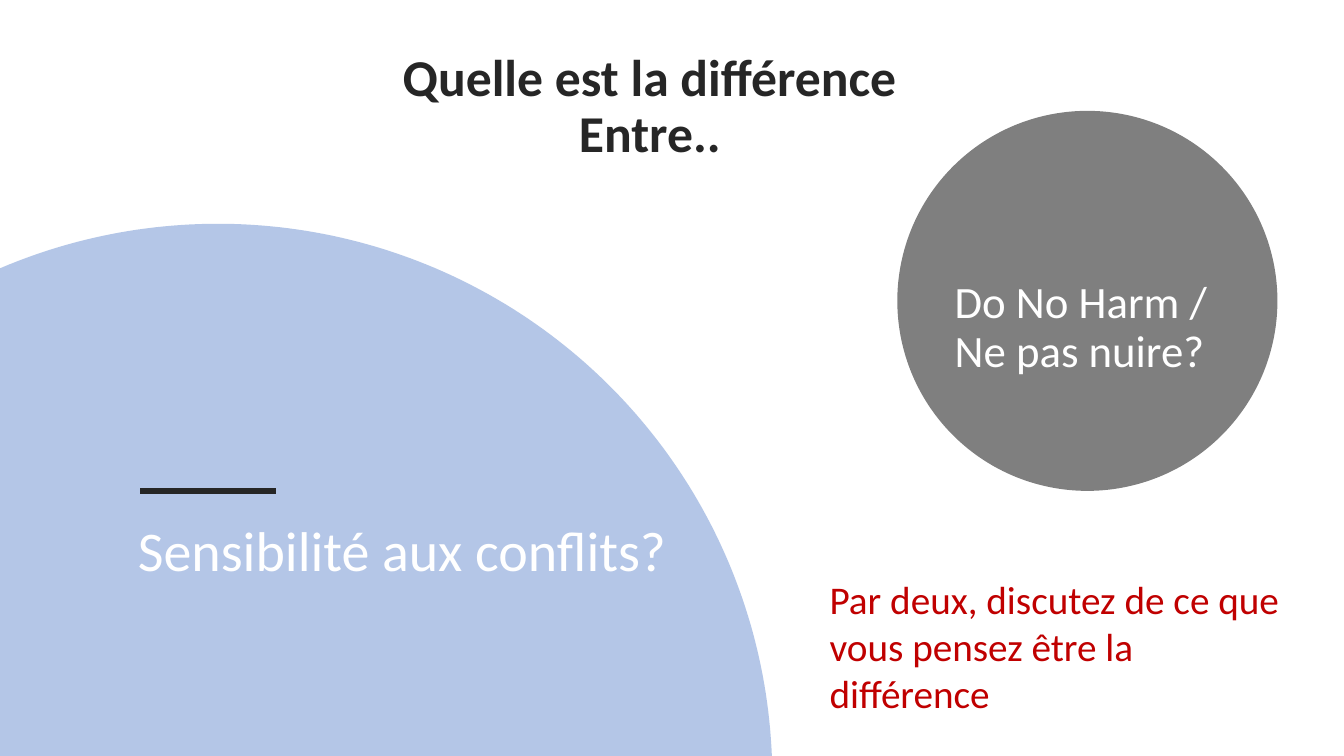
from math import acos, asin, cos, pi, sin

from lxml.etree import SubElement
from pptx import Presentation
from pptx.dml.color import RGBColor
from pptx.enum.shapes import MSO_CONNECTOR, MSO_SHAPE
from pptx.enum.text import MSO_ANCHOR, PP_ALIGN
from pptx.oxml.ns import qn
from pptx.util import Inches, Pt

BLUE = RGBColor(0x44, 0x72, 0xC4)
BLACK = RGBColor(0x00, 0x00, 0x00)
DARK = RGBColor(0x26, 0x26, 0x26)
WHITE = RGBColor(0xFF, 0xFF, 0xFF)
RED = RGBColor(0xC0, 0x00, 0x00)
WIDTH, HEIGHT = 13.33, 7.5

deck = Presentation()
deck.slide_width, deck.slide_height = Inches(WIDTH), Inches(HEIGHT)
page = deck.slides.add_slide(deck.slide_layouts[6])


def fill_translucent(shape, color, percent):
    shape.shadow.inherit = False
    shape.line.fill.background()
    shape.fill.solid()
    shape.fill.fore_color.rgb = color
    color_tag = shape.fill._xPr.find(qn("a:solidFill"))[0]
    SubElement(color_tag, qn("a:alpha")).set("val", str(percent * 1000))


def add_text(place, lines, size, color, spacing=0.9, before=10, bold=False):
    """Add a wrapped one-paragraph text box, with a line break between lines."""
    box = page.shapes.add_textbox(*(Inches(length) for length in place))
    box.text_frame.word_wrap = True
    para = box.text_frame.paragraphs[0]
    para.line_spacing = spacing
    para.space_before = Pt(before)
    for index, line in enumerate(lines):
        if index:
            para.add_line_break()
        span = para.add_run()
        span.text = line
        span.font.name = "Calibri"
        span.font.size = Pt(size)
        span.font.bold = bold
        span.font.color.rgb = color
    return box


# Large disc, cut off by the left and bottom edges of the slide
center_x, center_y, radius = 2.16, 7.72, 5.5
start = acos(-center_x / radius)
end = asin((center_y - HEIGHT) / radius)
steps = 120
angles = [start + (end - start) * step / steps for step in range(steps + 1)]
arc = [
    (Inches(center_x + radius * cos(angle)), Inches(center_y - radius * sin(angle)))
    for angle in angles
]
outline = page.shapes.build_freeform(Inches(0), Inches(HEIGHT))
outline.add_line_segments(arc, close=True)
fill_translucent(outline.convert_to_shape(), BLUE, 40)

title = add_text((2.98, 0.67, 6.93, 1), ["Quelle est la différence", "Entre.."],
                 36.9, DARK, before=0, bold=True)
title.text_frame.vertical_anchor = MSO_ANCHOR.BOTTOM
title.text_frame.paragraphs[0].alignment = PP_ALIGN.CENTER

add_text((1.27, 5.14, 5.74, 1.81), ["Sensibilité aux conflits?"], 40, WHITE)

accent = page.shapes.add_connector(
    MSO_CONNECTOR.STRAIGHT, Inches(1.39), Inches(4.87), Inches(2.74), Inches(4.87))
accent.line.color.rgb = DARK
accent.line.width = Pt(4)
SubElement(accent._element.spPr, qn("a:effectLst"))

small_disc = page.shapes.add_shape(
    MSO_SHAPE.OVAL, Inches(8.9), Inches(1.1), Inches(3.77), Inches(3.77))
fill_translucent(small_disc, BLACK, 50)

add_text((9.37, 2.73, 3.05, 1.69), ["Do No Harm / Ne pas nuire?"], 32, WHITE)
add_text((8.13, 5.66, 4.73, 1.51),
         ["Par deux, discutez de ce que vous pensez être la différence"],
         28, RED, spacing=1.0, before=0)

deck.save("out.pptx")
